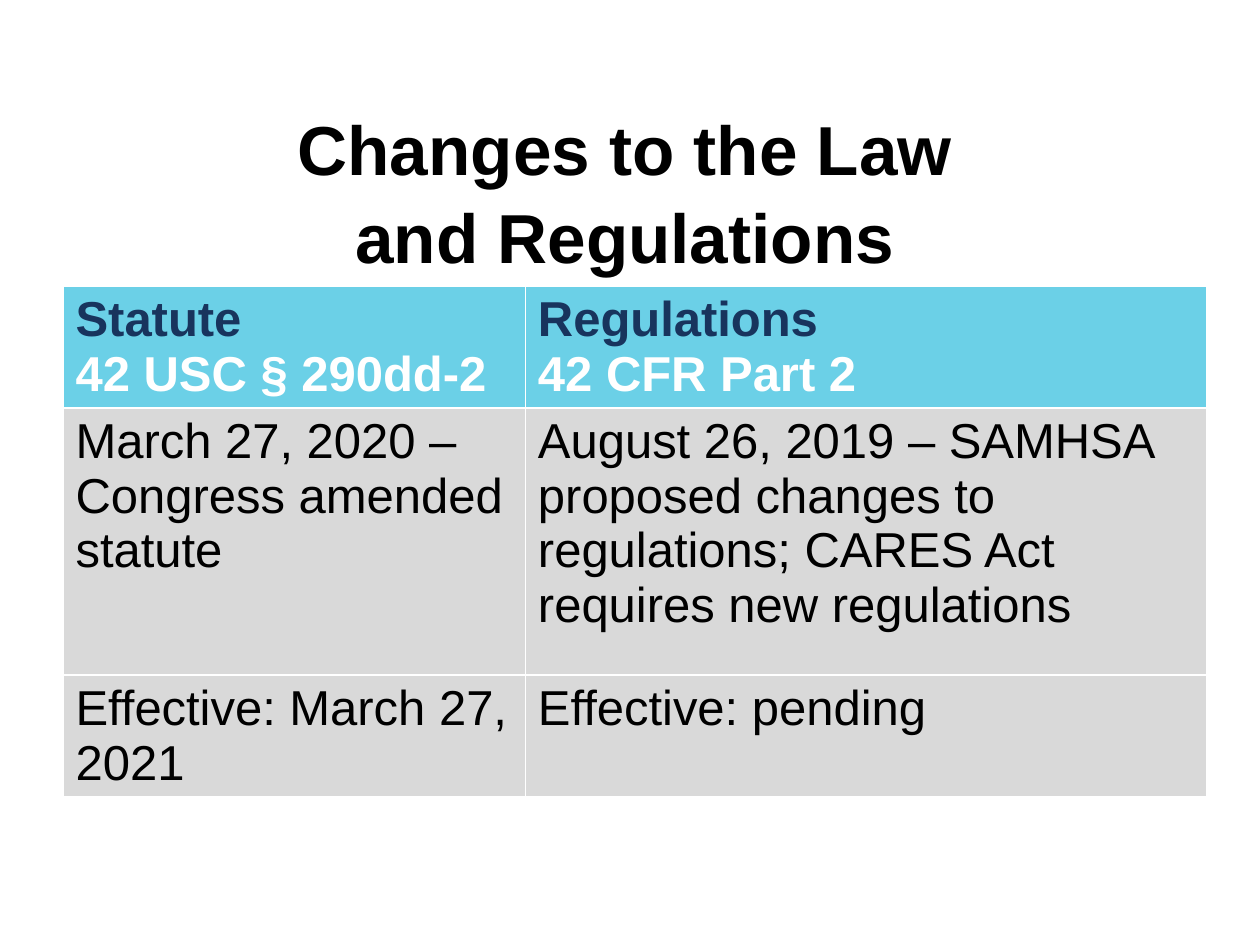
"""Build the slide on changes to the law and regulations."""
from typing import NamedTuple

from pptx import Presentation
from pptx.dml.color import RGBColor
from pptx.enum.text import MSO_ANCHOR, MSO_AUTO_SIZE, PP_ALIGN
from pptx.util import Inches, Pt

CENTER = PP_ALIGN.CENTER
MIDDLE = MSO_ANCHOR.MIDDLE
NO_FIT = MSO_AUTO_SIZE.NONE
TITLE_ONLY = 5

COLORS = {
    "black": "000000",
    "white": "FFFFFF",
    "navy": "18345D",
    "sky": "6BD0E7",
    "gray": "D9D9D9",
}
TITLE_FORMAT = {"name": "Arial", "size": Pt(39.6), "bold": True}
HEAD_FORMAT = {"name": "Arial", "size": Pt(28), "bold": True}
BODY_FORMAT = {"name": "Arial", "size": Pt(28), "bold": False}


class Line(NamedTuple):
    text: str
    color: str = "black"


class Row(NamedTuple):
    height: float
    fill: str
    font_format: dict
    cells: list[list[Line]]


COLUMN_WIDTHS = [3.67, 5.41]
ROWS = [
    Row(0.91, "sky", HEAD_FORMAT, [
        [Line("Statute", "navy"), Line("42 USC § 290dd-2", "white")],
        [Line("Regulations", "navy"), Line("42 CFR Part 2", "white")],
    ]),
    Row(2.12, "gray", BODY_FORMAT, [
        [Line("March 27, 2020 – Congress amended statute")],
        [Line("August 26, 2019 – SAMHSA proposed changes to regulations; "
              "CARES Act requires new regulations")],
    ]),
    Row(0.91, "gray", BODY_FORMAT, [
        [Line("Effective: March 27, 2021")],
        [Line("Effective: pending")],
    ]),
]


def rgb(color: str) -> RGBColor:
    return RGBColor.from_string(COLORS[color])


def format_font(font, font_format: dict, color: str) -> None:
    for name, value in font_format.items():
        setattr(font, name, value)
    font.color.rgb = rgb(color)


def fill_title(title, text: str) -> None:
    title.left, title.top = Inches(0.5), Inches(0.92)
    title.width, title.height = Inches(8.92), Inches(1.17)
    frame = title.text_frame
    frame.word_wrap = True
    frame.auto_size = NO_FIT
    frame.vertical_anchor = MIDDLE
    para = frame.paragraphs[0]
    para.text = text
    para.alignment = CENTER
    para.line_spacing = 1.05
    for span in para.runs:
        format_font(span.font, TITLE_FORMAT, "black")


def fill_cell(cell, lines: list[Line], row: Row) -> None:
    cell.fill.solid()
    cell.fill.fore_color.rgb = rgb(row.fill)
    frame = cell.text_frame
    for index, line in enumerate(lines):
        para = frame.add_paragraph() if index else frame.paragraphs[0]
        span = para.add_run()
        span.text = line.text
        format_font(span.font, row.font_format, line.color)


def add_comparison(page, rows: list[Row]) -> None:
    table = page.shapes.add_table(
        len(rows), len(COLUMN_WIDTHS), Inches(0.5), Inches(2.27),
        Inches(sum(COLUMN_WIDTHS)), Inches(sum(row.height for row in rows)),
    ).table
    table.horz_banding = False
    for column, width in zip(table.columns, COLUMN_WIDTHS):
        column.width = Inches(width)
    for table_row, row in zip(table.rows, rows):
        table_row.height = Inches(row.height)
        for cell, lines in zip(table_row.cells, row.cells):
            fill_cell(cell, lines, row)


def main() -> None:
    deck = Presentation()
    deck.slide_width, deck.slide_height = Inches(10), Inches(7.5)
    page = deck.slides.add_slide(deck.slide_layouts[TITLE_ONLY])
    fill_title(page.shapes.title, "Changes to the Law\vand Regulations")
    add_comparison(page, ROWS)
    deck.save("out.pptx")


if __name__ == "__main__":
    main()
